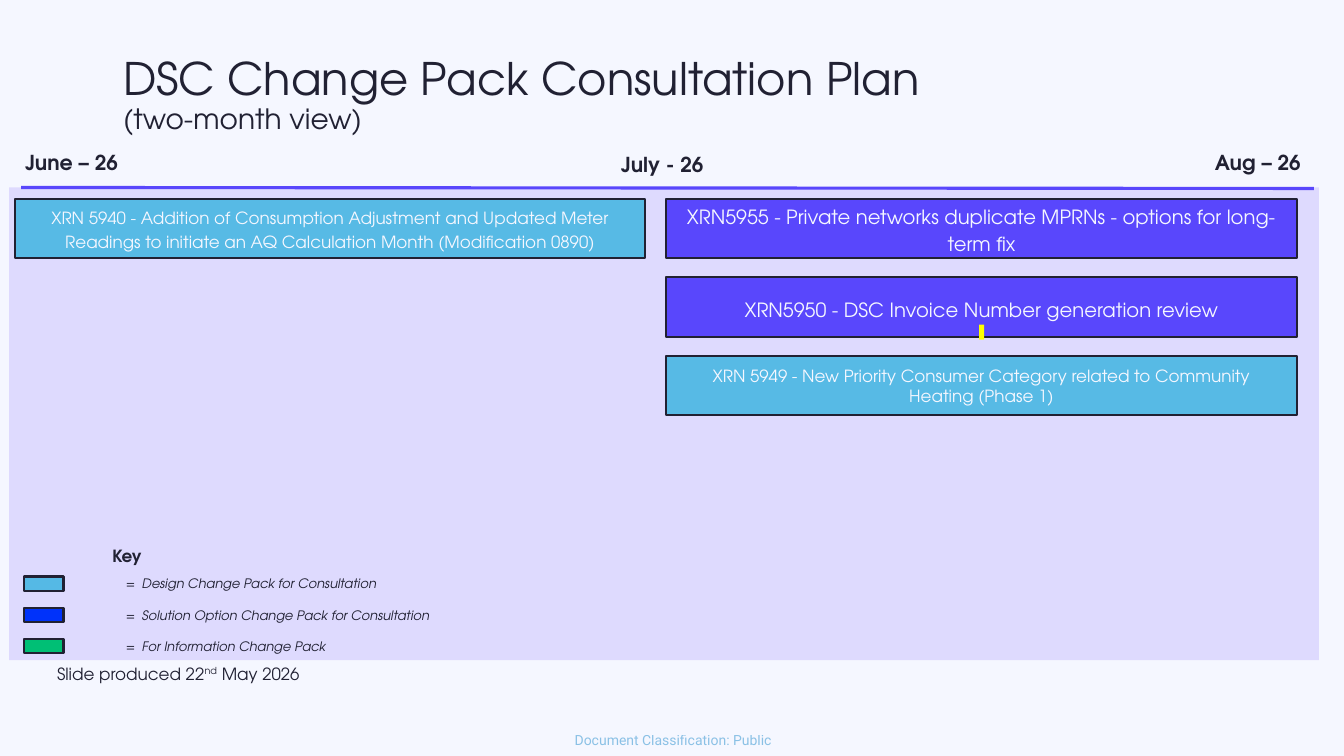
from lxml.etree import SubElement
from pptx import Presentation
from pptx.dml.color import RGBColor
from pptx.enum.shapes import MSO_CONNECTOR, MSO_SHAPE
from pptx.enum.text import MSO_ANCHOR, MSO_AUTO_SIZE, PP_ALIGN
from pptx.oxml.ns import qn
from pptx.util import Inches, Pt

BACKGROUND = RGBColor(0xF5, 0xF7, 0xFF)
INK = RGBColor(0x21, 0x21, 0x33)
LAVENDER = RGBColor(0xDE, 0xDA, 0xFE)
VIOLET = RGBColor(0x59, 0x47, 0xFC)
SKY = RGBColor(0x57, 0xBA, 0xE5)
KEY_SKY = RGBColor(0x55, 0xB9, 0xE5)
BLUE = RGBColor(0x00, 0x32, 0xFA)
GREEN = RGBColor(0x00, 0xBF, 0x75)
YELLOW = RGBColor(0xFF, 0xFF, 0x00)
FOOTER_BLUE = RGBColor(0x20, 0x8B, 0xCC)
FONT = "TeX Gyre Adventor"

prs = Presentation()
prs.slide_width, prs.slide_height = Inches(13.33), Inches(7.5)
slide = prs.slides.add_slide(prs.slide_layouts[5])
slide.background.fill.solid()
slide.background.fill.fore_color.rgb = BACKGROUND


def add_label(text, left, top, width, height, size, align=PP_ALIGN.LEFT, color=INK, font=FONT):
    frame = slide.shapes.add_textbox(Inches(left), Inches(top), Inches(width), Inches(height)).text_frame
    frame.word_wrap = True
    frame.vertical_anchor = MSO_ANCHOR.MIDDLE
    frame.text = text
    paragraph = frame.paragraphs[0]
    paragraph.alignment = align
    for run in paragraph.runs:
        run.font.size, run.font.name = Pt(size), font
        run.font.color.rgb = color
    return paragraph


def add_block(left, top, width, height, fill, outlined=True):
    block = slide.shapes.add_shape(
        MSO_SHAPE.RECTANGLE, Inches(left), Inches(top), Inches(width), Inches(height))
    block.shadow.inherit = False
    block.fill.solid()
    block.fill.fore_color.rgb = fill
    if outlined:
        block.line.color.rgb = INK
        block.line.width = Pt(1.5)
    else:
        block.line.fill.background()
    return block


title = slide.shapes.title
title.left, title.top, title.width, title.height = Inches(1.12), Inches(0.42), Inches(12.21), Inches(1.06)
title.text_frame.text = "DSC Change Pack Consultation Plan\v(two-month view)"
title.text_frame.auto_size = MSO_AUTO_SIZE.NONE
title.text_frame.vertical_anchor = MSO_ANCHOR.MIDDLE
heading = title.text_frame.paragraphs[0]
heading.alignment = PP_ALIGN.LEFT
heading.line_spacing = 0.9
for run, size in zip(heading.runs, (32, 20)):
    run.font.size, run.font.name = Pt(size), FONT
    run.font.color.rgb = INK

add_block(0.09, 1.86, 12.99, 4.69, LAVENDER, outlined=False)
timeline = slide.shapes.add_connector(
    MSO_CONNECTOR.STRAIGHT, Inches(0.21), Inches(1.86), Inches(13.03), Inches(1.87))
timeline.line.color.rgb = VIOLET
timeline.line.width = Pt(2.25)
SubElement(timeline._element.spPr, qn("a:effectLst"))

for month, left, top, width in (
    ("June – 26", 0.15, 1.43, 1.13),
    ("July - 26", 6.06, 1.45, 1.02),
    ("Aug – 26", 11.95, 1.43, 1.06),
):
    month_label = add_label(month, left, top, width, 0.35, 14.7)
    month_label.runs[0].font.bold = True
    month_label._parent.word_wrap = False

JUNE, JULY = 0.15, 6.61
FIRST_ROW, ROW_PITCH = 1.97, 0.78
changes = (
    ("XRN 5940 - Addition of Consumption Adjustment and Updated Meter Readings to initiate "
     "an AQ Calculation Month (Modification 0890)", JUNE, 0, SKY, 12, 1.15, 0.07),
    ("XRN5955 - Private networks duplicate MPRNs - options for long-term fix",
     JULY, 0, VIOLET, 14, 1.15, 0.07),
    ("XRN5950 - DSC Invoice Number generation review", JULY, 1, VIOLET, 14, 1, 0.13),
    ("XRN 5949 - New Priority Consumer Category related to Community Heating (Phase 1)",
     JULY, 2, SKY, 12, 1, 0.07),
)
for text, left, row, fill, size, spacing, top_margin in changes:
    frame = add_block(left, FIRST_ROW + row * ROW_PITCH, 6.25, 0.59, fill).text_frame
    frame.margin_left = frame.margin_right = Inches(0.13)
    frame.margin_top, frame.margin_bottom = Inches(top_margin), Inches(0.07)
    frame.vertical_anchor = MSO_ANCHOR.MIDDLE
    frame.text = text
    change = frame.paragraphs[0]
    change.alignment = PP_ALIGN.CENTER
    change.line_spacing = spacing
    change.runs[0].font.size, change.runs[0].font.name = Pt(size), FONT
    change.runs[0].font.color.rgb = BACKGROUND
add_block(9.71, 3.22, 0.05, 0.15, YELLOW, outlined=False)

add_label("Key", 0.76, 5.36, 1, 0.3, 12, PP_ALIGN.CENTER).runs[0].font.bold = True
key_entries = (
    (KEY_SKY, "Design Change Pack for Consultation"),
    (BLUE, "Solution Option Change Pack for Consultation"),
    (GREEN, "For Information Change Pack"),
)
for row, (fill, meaning) in enumerate(key_entries):
    top = 5.72 + row * 0.31
    add_block(0.24, top, 0.39, 0.14, fill)
    entry = add_label(f"=\t{meaning}", 1.15, top - 0.08, 3.57, 0.3, 9.3)
    entry.runs[0].font.italic = True
    tabs = SubElement(entry._p.get_or_add_pPr(), qn("a:tabLst"))
    SubElement(tabs, qn("a:tab"), pos=str(Inches(0.16)), algn="l")

produced = add_label("Slide produced 22", 0.34, 6.53, 2.73, 0.3, 12, PP_ALIGN.RIGHT)
for text, baseline in (("nd", 30000), (" May 2026", 0)):
    run = produced.add_run()
    run.text = text
    run.font.size, run.font.name = Pt(12), FONT
    run.font.color.rgb = INK
    run.font._element.set("baseline", str(baseline))

classification = add_label(
    "Document Classification: Public", 5.7, 7.26, 1.97, 0.17, 10, color=FOOTER_BLUE, font="Roboto")
footer = classification._parent
footer.margin_left = footer.margin_right = footer.margin_top = footer.margin_bottom = 0
footer.word_wrap = False
footer_color = classification.runs[0].font._element.find(".//" + qn("a:srgbClr"))
SubElement(footer_color, qn("a:alpha"), val="50000")

prs.save("out.pptx")
